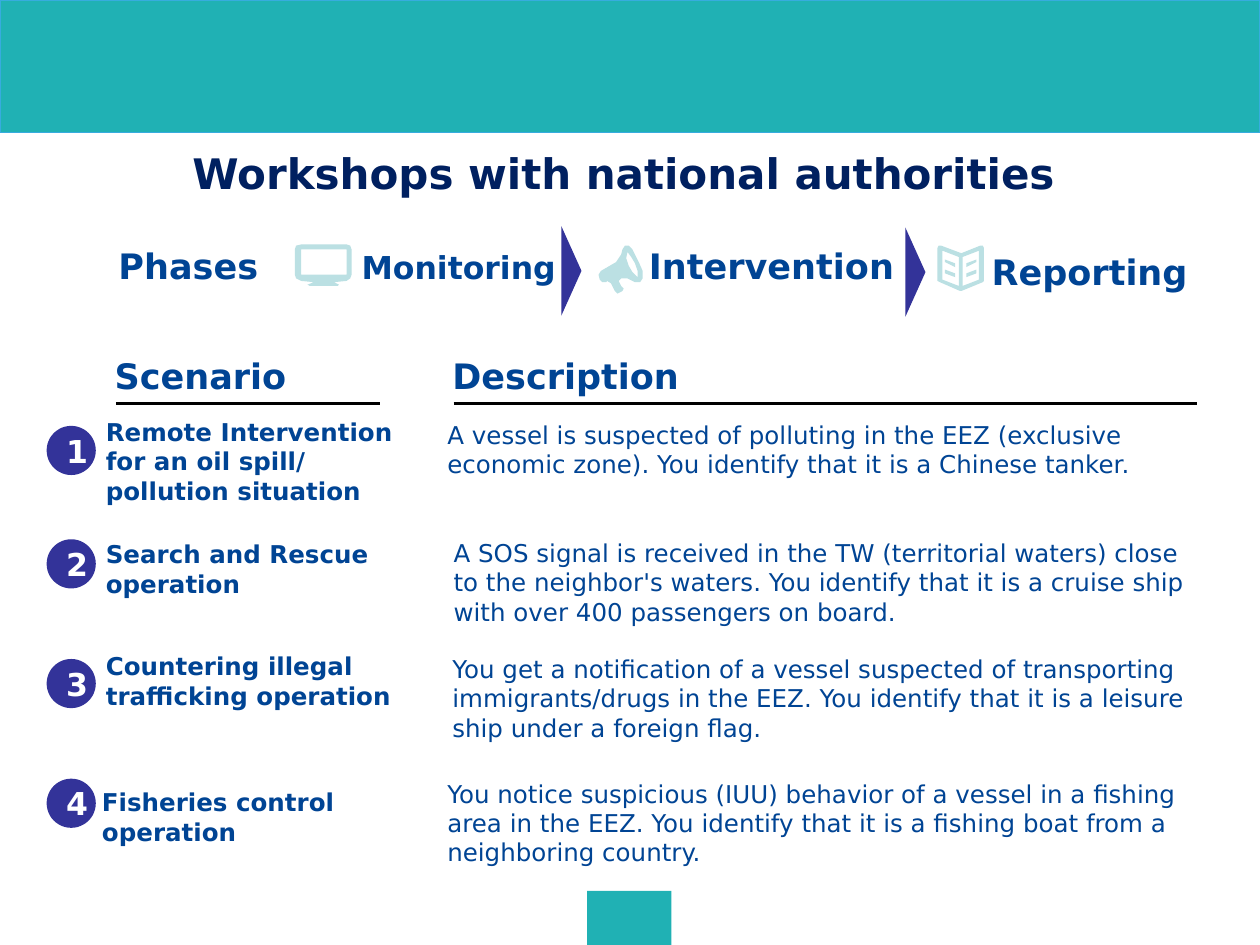
"""Builds the slide on workshops with national authorities: phases and scenarios."""
from lxml.etree import SubElement
from pptx import Presentation
from pptx.dml.color import RGBColor
from pptx.enum.shapes import MSO_CONNECTOR, MSO_SHAPE
from pptx.enum.text import MSO_ANCHOR, PP_ALIGN
from pptx.oxml.ns import qn
from pptx.util import Inches, Pt

COLORS = {name: RGBColor.from_string(value) for name, value in {
    "teal": "20B1B4", "band_edge": "37ACDE", "title": "002060", "text": "004494",
    "accent": "333399", "icon": "BBE0E3", "rule": "000000", "white": "FFFFFF"}.items()}


def fill_shape(shape, color):
    shape.shadow.inherit = False
    shape.fill.solid()
    shape.fill.fore_color.rgb = COLORS[color]
    shape.line.fill.background()


def write_text(frame, text, size, color="text", bold=True, align=PP_ALIGN.LEFT):
    frame.word_wrap = True
    frame.text = text
    paragraph = frame.paragraphs[0]
    paragraph.alignment = align
    paragraph.font.name = "DejaVu Sans"
    paragraph.font.size = Pt(size)
    paragraph.font.bold = bold
    paragraph.font.color.rgb = COLORS[color]


presentation = Presentation()
presentation.slide_width, presentation.slide_height = Inches(10), Inches(7.5)
slide = presentation.slides.add_slide(presentation.slide_layouts[5])
shapes = slide.shapes

band = shapes.add_shape(MSO_SHAPE.RECTANGLE, 0, 0, Inches(10), Inches(1.05))
fill_shape(band, "teal")
band.line.color.rgb = COLORS["band_edge"]
band.line.width = Pt(0.75)
footer = shapes.add_shape(
    MSO_SHAPE.RECTANGLE, Inches(4.66), Inches(7.07), Inches(0.67), Inches(0.43))
fill_shape(footer, "teal")

title = shapes.title
title.left, title.top, title.width, title.height = map(Inches, (0.01, 1.12, 9.88, 0.5))
title.text_frame.vertical_anchor = MSO_ANCHOR.TOP
write_text(title.text_frame, "Workshops with national authorities", 24, "title",
           align=PP_ALIGN.CENTER)

for start, end in [(0.92, 3.02), (3.6, 9.5)]:
    rule = shapes.add_connector(
        MSO_CONNECTOR.STRAIGHT, Inches(start), Inches(3.2), Inches(end), Inches(3.2))
    rule.line.color.rgb = COLORS["rule"]
    rule.line.width = Pt(1.5)
    SubElement(rule._element.spPr, qn("a:effectLst"))

monitor = [
    [(2.75, 1.94), (2.39, 1.94), (2.35, 1.95), (2.34, 1.98), (2.34, 2.18), (2.35, 2.21),
     (2.39, 2.23), (2.49, 2.24), (2.44, 2.26), (2.46, 2.27), (2.68, 2.27), (2.69, 2.26),
     (2.65, 2.24), (2.75, 2.23), (2.78, 2.21), (2.79, 2.18), (2.79, 1.98), (2.78, 1.95)],
    [(2.75, 2.18), (2.39, 2.18), (2.39, 1.98), (2.75, 1.98)],
]
megaphone = [
    [(5.07, 2.08), (5.02, 1.98), (4.99, 1.95), (4.96, 1.95), (4.94, 1.98), (4.93, 2.02),
     (4.89, 2.08), (4.77, 2.15), (4.75, 2.18), (4.76, 2.22), (4.78, 2.24), (4.81, 2.24),
     (4.82, 2.23), (4.85, 2.25), (4.88, 2.31), (4.9, 2.33), (4.94, 2.31), (4.95, 2.29),
     (4.93, 2.27), (4.91, 2.23), (4.93, 2.21), (4.98, 2.21), (5.04, 2.24), (5.08, 2.24),
     (5.1, 2.21), (5.1, 2.15)],
    [(5.06, 2.2), (5.02, 2.16), (4.99, 2.11), (4.97, 2.05), (4.98, 2), (5.01, 2.04),
     (5.04, 2.09), (5.06, 2.15)],
]
left_page = [
    [(7.61, 2.27), (7.48, 2.22), (7.48, 1.99), (7.61, 2.04)],
    [(7.58, 2.09), (7.5, 2.06), (7.5, 2.08), (7.58, 2.12)],
    [(7.58, 2.17), (7.5, 2.14), (7.5, 2.17), (7.58, 2.2)],
]
right_page = [[(15.25 - x, y) for x, y in contour] for contour in left_page]
cover = [(7.63, 2.01), (7.47, 1.95), (7.45, 1.95), (7.44, 1.97), (7.44, 2.23),
         (7.46, 2.24), (7.62, 2.31), (7.63, 2.31), (7.8, 2.24), (7.81, 2.23),
         (7.81, 1.97), (7.8, 1.95), (7.78, 1.95)]
book = [cover] + left_page + right_page

for icon in (monitor, megaphone, book):
    contours = [[(Inches(x), Inches(y)) for x, y in contour] for contour in icon]
    builder = shapes.build_freeform(*contours[0][0])
    for contour in contours:
        if contour is not contours[0]:
            builder.move_to(*contour[0])
        builder.add_line_segments(contour[1:], close=True)
    fill_shape(builder.convert_to_shape(), "icon")

for left, top in [(4.18, 2.07), (6.91, 2.08)]:
    arrow = shapes.add_shape(
        MSO_SHAPE.ISOSCELES_TRIANGLE, Inches(left), Inches(top), Inches(0.71), Inches(0.16))
    arrow.rotation = 90
    fill_shape(arrow, "accent")

labels = [
    ("Phases", 0.94, 1.94, 1.26, 0.32, 20, True),
    ("Monitoring", 2.87, 1.97, 2.18, 0.32, 18, True),
    ("Intervention", 5.15, 1.94, 2.01, 0.32, 20, True),
    ("Reporting", 7.87, 1.99, 1.57, 0.32, 20, True),
    ("Scenario", 0.91, 2.81, 3.94, 0.32, 20, True),
    ("Description", 3.59, 2.81, 3.94, 0.32, 20, True),
]
scenarios = [
    (3.38, "Remote Intervention for an oil spill/ pollution situation", 0.84, 3.31, 2.57, 0.94,
     "A vessel is suspected of polluting in the EEZ (exclusive economic zone). "
     "You identify that it is a Chinese tanker.", 3.55, 3.33),
    (4.28, "Search and Rescue operation", 0.84, 4.28, 2.4, 0.94,
     "A SOS signal is received in the TW (territorial waters) close to the neighbor's waters. "
     "You identify that it is a cruise ship with over 400 passengers on board.", 3.6, 4.27),
    (5.23, "Countering illegal trafficking operation", 0.84, 5.17, 2.4, 0.36,
     "You get a notification of a vessel suspected of transporting immigrants/drugs in the EEZ. "
     "You identify that it is a leisure ship under a foreign flag.", 3.59, 5.19),
    (6.18, "Fisheries control operation", 0.81, 6.25, 2.6, 0.36,
     "You notice suspicious (IUU) behavior of a vessel in a fishing area in the EEZ. "
     "You identify that it is a fishing boat from a neighboring country.", 3.55, 6.18),
]
for number, scenario in enumerate(scenarios, 1):
    badge_top, name, left, top, width, height, description, text_left, text_top = scenario
    badge = shapes.add_shape(
        MSO_SHAPE.OVAL, Inches(0.37), Inches(badge_top), Inches(0.39), Inches(0.39))
    fill_shape(badge, "accent")
    badge.text_frame.vertical_anchor = MSO_ANCHOR.MIDDLE
    write_text(badge.text_frame, str(number), 18, "white", align=PP_ALIGN.CENTER)
    labels.append((name, left, top, width, height, 14, True))
    labels.append((description, text_left, text_top, 5.91, 0.94, 14, False))

for text, left, top, width, height, size, bold in labels:
    frame = shapes.add_textbox(*map(Inches, (left, top, width, height))).text_frame
    frame.margin_left = frame.margin_top = frame.margin_right = frame.margin_bottom = 0
    write_text(frame, text, size, bold=bold)

presentation.save("out.pptx")
